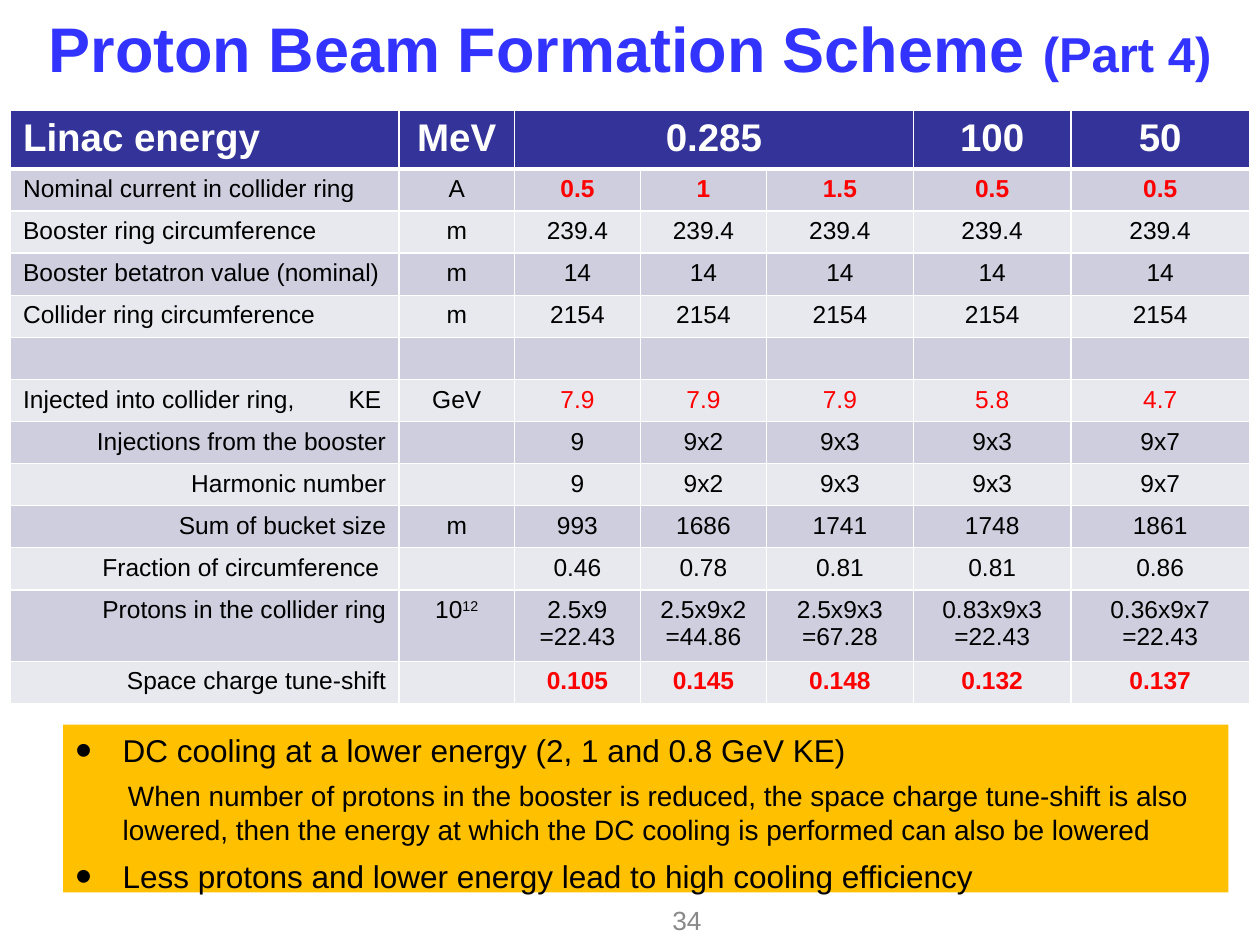
import pptx
import pptx.util
import pptx.dml.color
import pptx.enum.shapes
import pptx.enum.text
import pptx.oxml.ns
import lxml.etree

Pt = pptx.util.Pt
RGB = pptx.dml.color.RGBColor.from_string
ALIGN = pptx.enum.text.PP_ALIGN
MIDDLE = pptx.enum.text.MSO_ANCHOR.MIDDLE
LEFT, MID, RIGHT = ALIGN.LEFT, ALIGN.CENTER, ALIGN.RIGHT

theme = {
    "font": "Arial",
    "title": "3333FF", "head": "333399", "odd": "CECEDE", "even": "E8E8EF",
    "white": "FFFFFF", "black": "000000", "red": "FF0000",
    "gold": "FFC000", "gray": "898989",
    "big": 36, "part": 28, "top": 22, "point": 18, "note": 16, "page": 15, "cell": 14,
}


def write(text, para, size="cell", color="black", bold=False, align=LEFT, base=0):
    para.alignment = align
    run = para.add_run()
    run.text = text
    font = run.font
    font.name = theme["font"]
    font.size = Pt(theme[size])
    font.bold = bold
    font.color.rgb = RGB(theme[color])
    if base:
        font._element.set("baseline", str(base * 1000))


def add(parent, tag, **attrs):
    node = lxml.etree.SubElement(parent, pptx.oxml.ns.qn(tag))
    for name, value in attrs.items():
        node.set(name, str(value))
    return node


deck = pptx.Presentation()
deck.slide_width, deck.slide_height = Pt(720), Pt(540)
slide = deck.slides.add_slide(deck.slide_layouts[6])
shapes = slide.shapes

title = shapes.add_textbox(Pt(0), Pt(0), Pt(720), Pt(54)).text_frame
title.word_wrap = True
title.vertical_anchor = MIDDLE
line = title.paragraphs[0]
write("Proton Beam Formation Scheme ", line, size="big", color="title", bold=True, align=MID)
write("(Part 4)", line, size="part", color="title", bold=True, align=MID)

page = shapes.add_textbox(Pt(300), Pt(511), Pt(108), Pt(29)).text_frame
page.word_wrap = True
page.vertical_anchor = MIDDLE
write("34", page.paragraphs[0], size="page", color="gray", align=RIGHT)

rows = [
    ["Linac energy", "MeV", "0.285", "", "", "100", "50"],
    ["Nominal current in collider ring", "A", "0.5", "1", "1.5", "0.5", "0.5"],
    ["Booster ring circumference", "m"] + ["239.4"] * 5,
    ["Booster betatron value (nominal)", "m"] + ["14"] * 5,
    ["Collider ring circumference", "m"] + ["2154"] * 5,
    [""] * 7,
    ["Injected into collider ring,\tKE", "GeV", "7.9", "7.9", "7.9", "5.8", "4.7"],
    ["Injections from the booster", "", "9", "9x2", "9x3", "9x3", "9x7"],
    ["Harmonic number", "", "9", "9x2", "9x3", "9x3", "9x7"],
    ["Sum of bucket size", "m", "993", "1686", "1741", "1748", "1861"],
    ["Fraction of circumference ", "", "0.46", "0.78", "0.81", "0.81", "0.86"],
    ["Protons in the collider ring", "10^12", "2.5x9\n=22.43", "2.5x9x2\n=44.86",
     "2.5x9x3\n=67.28", "0.83x9x3\n=22.43", "0.36x9x7\n=22.43"],
    ["Space charge tune-shift", "", "0.105", "0.145", "0.148", "0.132", "0.137"],
]
widths = [222, 66, 72, 72, 84, 90, 102]
heights = [33.6] + [24] * 10 + [40.8, 24]
red, strong = {1, 6, 12}, {0, 1, 12}

table = shapes.add_table(len(rows), len(widths), Pt(6), Pt(63),
                         Pt(sum(widths)), Pt(sum(heights))).table
for col, width in zip(table.columns, widths):
    col.width = Pt(width)
for row, height in zip(table.rows, heights):
    row.height = Pt(height)
table.cell(0, 2).merge(table.cell(0, 4))

for r, row in enumerate(rows):
    fill = "head" if r == 0 else "odd" if r % 2 else "even"
    size = "top" if r == 0 else "cell"
    for c, text in enumerate(row):
        cell = table.cell(r, c)
        props = cell._tc.get_or_add_tcPr()
        for side in "LRTB":
            thick = (r, side) in {(0, "B"), (1, "T")}
            edge = add(props, "a:ln" + side, w=Pt(3 if thick else 1))
            add(add(edge, "a:solidFill"), "a:srgbClr", val=theme["white"])
        cell.fill.solid()
        cell.fill.fore_color.rgb = RGB(theme[fill])
        frame = cell.text_frame
        color = "white" if r == 0 else "red" if c > 1 and r in red else "black"
        bold = r == 0 or (c > 1 and r in strong)
        align = MID if c else RIGHT if r > 6 else LEFT
        if not text:
            add(frame.paragraphs[0]._p, "a:endParaRPr", sz=theme[size] * 100)
            continue
        for n, part in enumerate(text.split("\n")):
            para = frame.add_paragraph() if n else frame.paragraphs[0]
            if "\t" in part:
                tabs = add(para._p.get_or_add_pPr(), "a:tabLst")
                add(tabs, "a:tab", pos=Pt(186), algn="l")
            for k, piece in enumerate(part.split("^")):
                write(piece, para, size=size, color=color, bold=bold,
                      align=align, base=30 * k)

box = shapes.add_shape(pptx.enum.shapes.MSO_SHAPE.RECTANGLE,
                       Pt(36), Pt(414), Pt(666), Pt(96))
box.shadow.inherit = False
box.fill.solid()
box.fill.fore_color.rgb = RGB(theme["gold"])
box.line.fill.background()
frame = box.text_frame
frame.word_wrap = True
frame.vertical_anchor = pptx.enum.text.MSO_ANCHOR.TOP

points = [
    ("DC cooling at a lower energy (2, 1 and 0.8 GeV KE)", "point"),
    ("When number of protons in the booster is reduced, the space charge tune-shift "
     "is also lowered, then the energy at which the DC cooling is performed can also "
     "be lowered", "note"),
    ("Less protons and lower energy lead to high cooling efficiency", "point"),
]
for n, (text, size) in enumerate(points):
    para = frame.add_paragraph() if n else frame.paragraphs[0]
    props = para._p.get_or_add_pPr()
    props.set("marL", str(Pt(27)))
    props.set("indent", str(Pt(-27 if size == "point" else 3)))
    if n:
        para.space_before = Pt(6)
    if size == "point":
        add(props, "a:buSzPct", val=150000)
        add(props, "a:buFont", typeface=theme["font"])
        add(props, "a:buChar", char="•")
    write(text, para, size=size)

deck.save("out.pptx")
